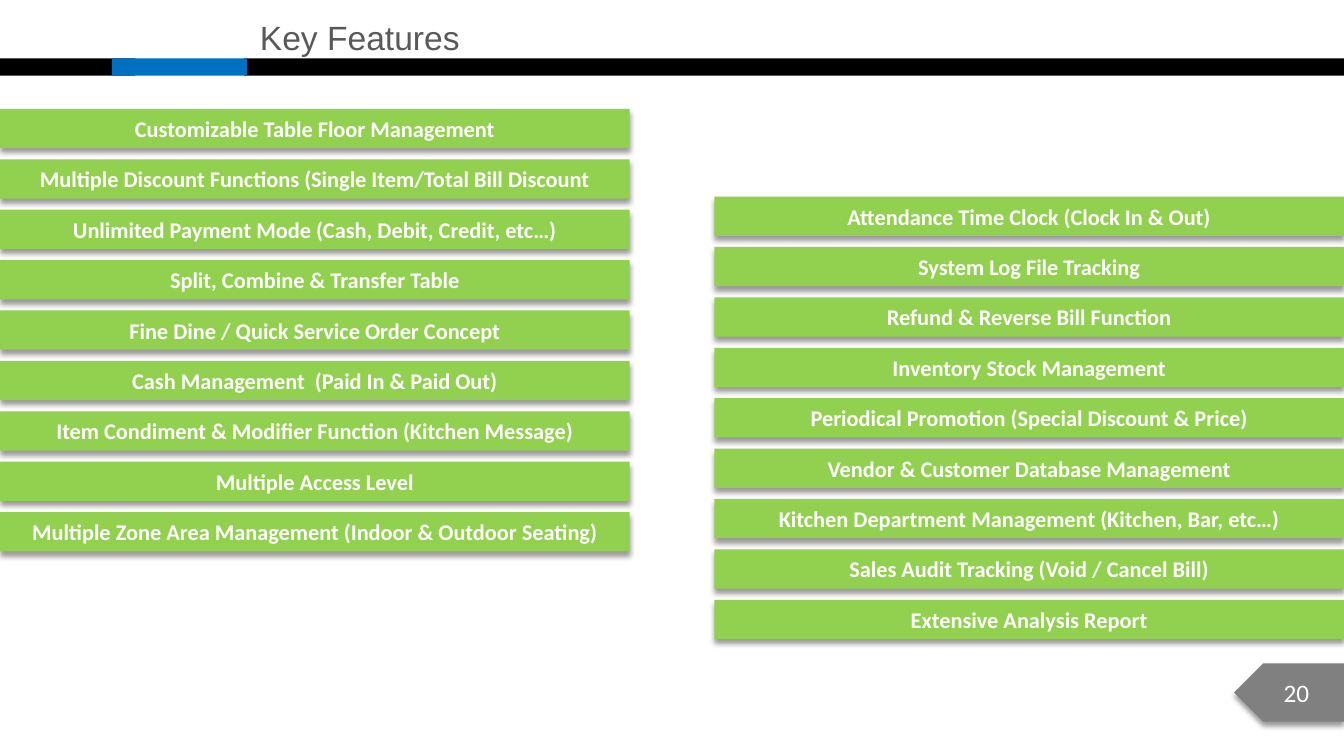
"""Build the Key Features slide with two columns of feature bars."""
from lxml import etree
from pptx import Presentation
from pptx.dml.color import RGBColor
from pptx.enum import shapes, text
from pptx.oxml import ns
from pptx.util import Inches, Pt

TITLE = "Key Features"
PAGE = "20"
COLUMNS = [
    (0, 1.08, [
        "Customizable Table Floor Management",
        "Multiple Discount Functions (Single Item/Total Bill Discount",
        "Unlimited Payment Mode (Cash, Debit, Credit, etc…)",
        "Split, Combine & Transfer Table",
        "Fine Dine / Quick Service Order Concept",
        "Cash Management  (Paid In & Paid Out)",
        "Item Condiment & Modifier Function (Kitchen Message)",
        "Multiple Access Level",
        "Multiple Zone Area Management (Indoor & Outdoor Seating)",
    ]),
    (7.09, 1.95, [
        "Attendance Time Clock (Clock In & Out)",
        "System Log File Tracking",
        "Refund & Reverse Bill Function",
        "Inventory Stock Management",
        "Periodical Promotion (Special Discount & Price)",
        "Vendor & Customer Database Management",
        "Kitchen Department Management (Kitchen, Bar, etc…)",
        "Sales Audit Tracking (Void / Cancel Bill)",
        "Extensive Analysis Report",
    ]),
]
WIDTH, HEIGHT = 13.34, 7.5
BAR_W, BAR_H, STEP = 6.25, 0.39, 0.5
RULE_Y, RULE_H = 0.58, 0.17


class Theme:
    """Colours, fonts and type sizes."""
    black, blue, green = "000000", "0070C0", "92D050"
    grey, ink, white = "808080", "595959", "FFFFFF"
    head, body = "Arial", "Calibri"
    title, page, label = 24, 18, 16


RULES = [
    (0, 1.34, Theme.black),
    (2.42, WIDTH - 2.42, Theme.black),
    (1.11, 1.34, Theme.blue),
]


def style(para, name, size, color, bold=False):
    """Set the font of a paragraph."""
    font = para.font
    font.name, font.size, font.bold = name, Pt(size), bold
    font.color.rgb = RGBColor.from_string(color)


def block(slide, kind, box, color):
    """Add a plain filled shape."""
    shape = slide.shapes.add_shape(kind, *map(Inches, box))
    shape.shadow.inherit = False
    shape.fill.solid()
    shape.fill.fore_color.rgb = RGBColor.from_string(color)
    shape.line.fill.background()
    return shape


def shade(shape):
    """Give a shape a soft shadow below it."""
    effects = shape._element.spPr.find(ns.qn("a:effectLst"))
    outer = etree.SubElement(
        effects, ns.qn("a:outerShdw"), blurRad=str(Pt(4)), dist=str(Pt(3)),
        dir="5400000", algn="t", rotWithShape="0")
    color = etree.SubElement(outer, ns.qn("a:srgbClr"), val=Theme.black)
    etree.SubElement(color, ns.qn("a:alpha"), val="40000")


def label(shape, words, size, bold=False):
    """Write centred white text in a shape."""
    frame = shape.text_frame
    frame.text = words
    frame.vertical_anchor = text.MSO_ANCHOR.MIDDLE
    para = frame.paragraphs[0]
    para.alignment = text.PP_ALIGN.CENTER
    style(para, Theme.body, size, Theme.white, bold)


def head(slide):
    """Place and format the title."""
    title = slide.shapes.title
    title.left, title.top = Inches(2.48), Inches(-0.08)
    title.width, title.height = Inches(2.2), Inches(0.63)
    frame = title.text_frame
    frame.text = TITLE
    frame.word_wrap = False
    frame.auto_size = text.MSO_AUTO_SIZE.SHAPE_TO_FIT_TEXT
    frame.vertical_anchor = text.MSO_ANCHOR.TOP
    para = frame.paragraphs[0]
    para.alignment = text.PP_ALIGN.LEFT
    para.line_spacing = 1.5
    style(para, Theme.head, Theme.title, Theme.ink)


def main():
    """Build and save the slide."""
    deck = Presentation()
    deck.slide_width, deck.slide_height = Inches(WIDTH), Inches(HEIGHT)
    slide = deck.slides.add_slide(deck.slide_layouts[5])
    head(slide)
    rect = shapes.MSO_SHAPE.RECTANGLE
    for left, width, color in RULES:
        block(slide, rect, (left, RULE_Y, width, RULE_H), color)
    tag = block(slide, shapes.MSO_SHAPE.PENTAGON,
                (12.25, 6.58, 1.09, 0.58), Theme.grey)
    tag._element.spPr.find(ns.qn("a:xfrm")).set("flipH", "1")
    shade(tag)
    label(tag, PAGE, Theme.page)
    for left, top, names in COLUMNS:
        for row, name in enumerate(names):
            box = (left, top + row * STEP, BAR_W, BAR_H)
            bar = block(slide, rect, box, Theme.green)
            shade(bar)
            label(bar, name, Theme.label, True)
    deck.save("out.pptx")


if __name__ == "__main__":
    main()
